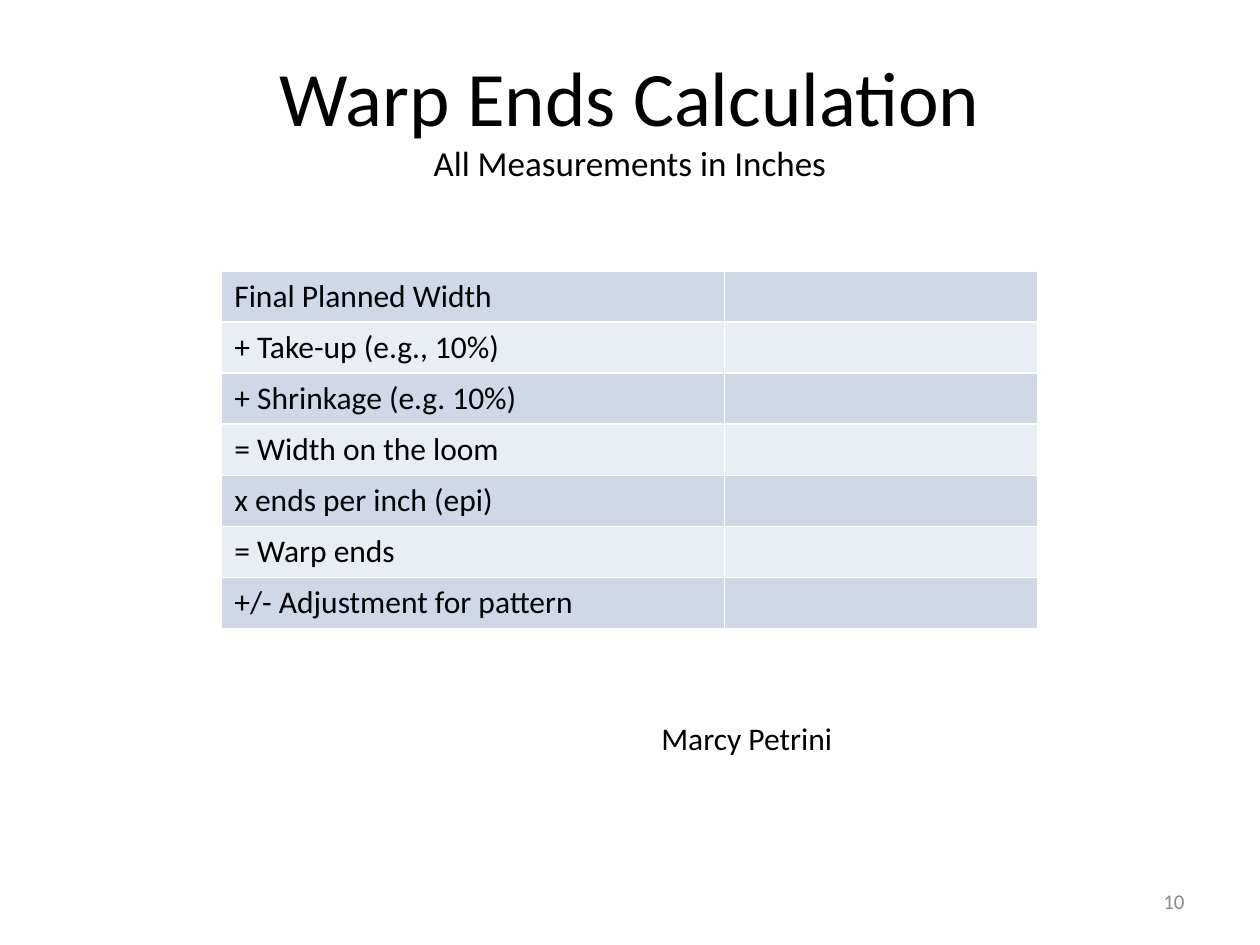
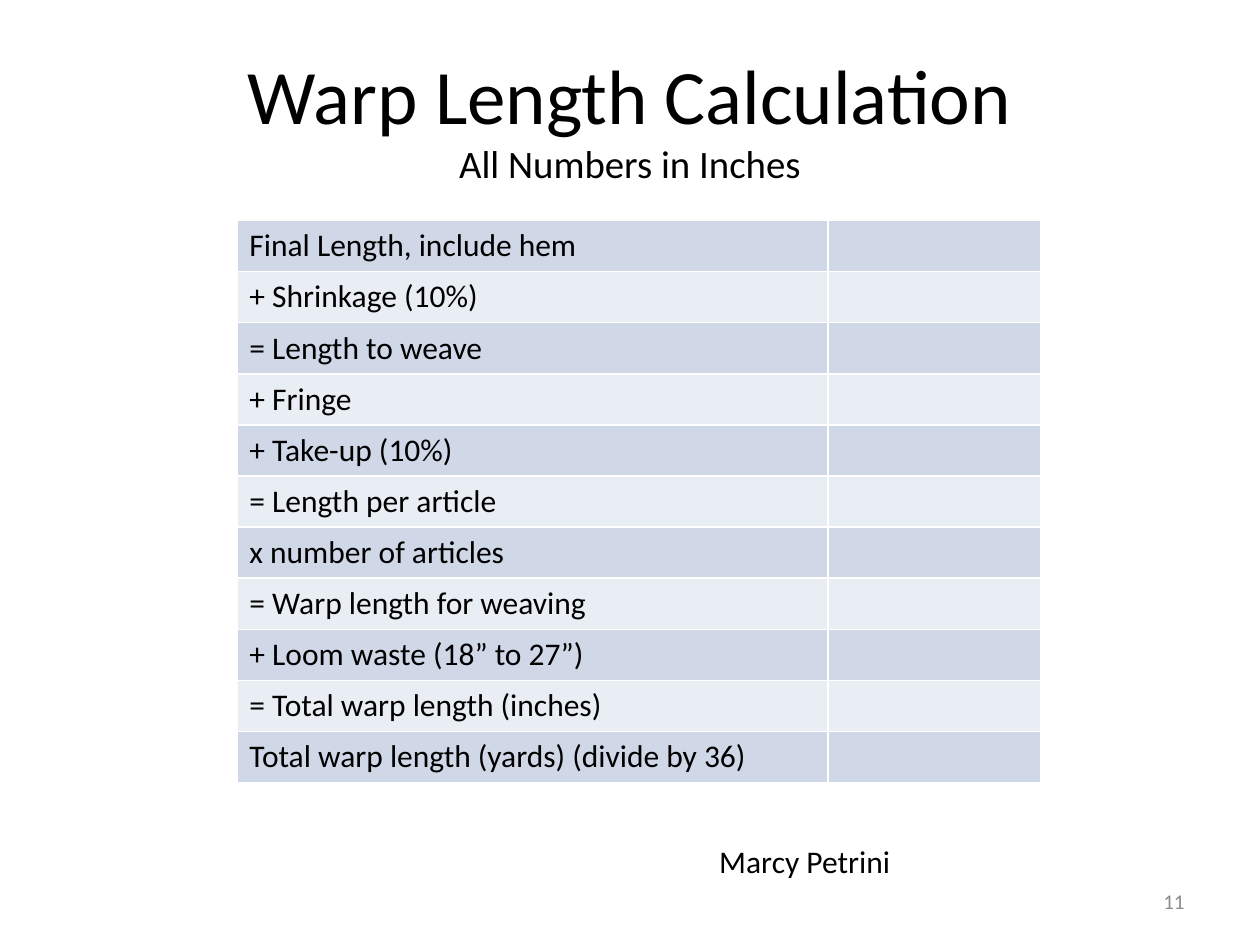
from dataclasses import dataclass

from lxml.etree import SubElement
from pptx import Presentation
from pptx.dml.color import RGBColor
from pptx.enum.text import MSO_ANCHOR, MSO_AUTO_SIZE, PP_ALIGN
from pptx.oxml.ns import qn
from pptx.util import Inches, Pt


@dataclass(frozen=True)
class Theme:
    font: str = "Calibri"
    ink: str = "000000"
    muted: str = "8C8C8C"
    bands: tuple = ("D0D8E8", "E9EDF4")
    border: str = "FFFFFF"
    border_pt: float = 1
    title: float = 44
    body: float = 18
    number: float = 12


THEME = Theme()
AUTHOR = "Marcy Petrini"
TITLE_BOX = (0.5, 0.3, 9, 1.25)
NUMBER_BOX = (7.17, 6.95, 2.33, 0.4)

SLIDES = [
    dict(
        number=10,
        title="Warp Ends Calculation",
        subtitle="All Measurements in Inches",
        subtitle_size=20,
        steps=[
            "Final Planned Width",
            "+ Take-up (e.g., 10%)",
            "+ Shrinkage (e.g. 10%)",
            "= Width on the loom",
            "x ends per inch (epi)",
            "= Warp ends",
            "+/- Adjustment for pattern",
        ],
        table_box=(1.76, 2.15, 6.48, 2.84),
        step_width=3.99,
        author_box=(5.15, 5.66, 3.09, 0.4),
    ),
    dict(
        number=11,
        title="Warp Length Calculation",
        subtitle="All Numbers in Inches",
        subtitle_size=22.2,
        steps=[
            "Final Length, include hem",
            "+ Shrinkage (10%)",
            "= Length to weave",
            "+ Fringe",
            "+ Take-up (10%)",
            "= Length per article",
            "x number of articles",
            "= Warp length for weaving",
            "+ Loom waste (18” to 27”)",
            "= Total warp length (inches)",
            "Total warp length (yards) (divide by 36)",
        ],
        table_box=(1.88, 1.75, 6.38, 4.46),
        step_width=4.69,
        author_box=(5.61, 6.63, 2.65, 0.41),
    ),
]


def inches(box):
    return [Inches(v) for v in box]


def write(p, text, size=THEME.body, color=THEME.ink, align=PP_ALIGN.LEFT):
    p.alignment = align
    r = p.add_run()
    r.text = text
    r.font.name = THEME.font
    r.font.size = Pt(size)
    r.font.color.rgb = RGBColor.from_string(color)


def add_title(s, title, subtitle, subtitle_size):
    sp = s.shapes.title
    sp.left, sp.top, sp.width, sp.height = inches(TITLE_BOX)
    tf = sp.text_frame
    tf.auto_size = MSO_AUTO_SIZE.NONE
    tf.vertical_anchor = MSO_ANCHOR.MIDDLE
    p = tf.paragraphs[0]
    write(p, title, size=THEME.title, align=PP_ALIGN.CENTER)
    p.add_line_break()
    write(p, subtitle, size=subtitle_size, align=PP_ALIGN.CENTER)


def add_text(s, text, box, anchor=MSO_ANCHOR.TOP, **fmt):
    tf = s.shapes.add_textbox(*inches(box)).text_frame
    tf.word_wrap = True
    tf.vertical_anchor = anchor
    write(tf.paragraphs[0], text, **fmt)


def style_cell(cell, fill):
    tcPr = cell._tc.get_or_add_tcPr()
    for side in ("a:lnL", "a:lnR", "a:lnT", "a:lnB"):
        ln = SubElement(tcPr, qn(side), w=str(Pt(THEME.border_pt)))
        SubElement(SubElement(ln, qn("a:solidFill")), qn("a:srgbClr"), val=THEME.border)
    cell.fill.solid()
    cell.fill.fore_color.rgb = RGBColor.from_string(fill)


def add_worksheet(s, steps, box, step_width):
    table = s.shapes.add_table(len(steps), 2, *inches(box)).table
    table.first_row = table.horz_banding = False
    table.columns[0].width = Inches(step_width)
    table.columns[1].width = Inches(box[2] - step_width)
    for i, step in enumerate(steps):
        table.rows[i].height = Inches(box[3] / len(steps))
        for cell in table.rows[i].cells:
            style_cell(cell, THEME.bands[i % 2])
        write(table.cell(i, 0).text_frame.paragraphs[0], step)


def main():
    prs = Presentation()
    prs.slide_width, prs.slide_height = Inches(10), Inches(7.5)
    for d in SLIDES:
        s = prs.slides.add_slide(prs.slide_layouts.get_by_name("Title Only"))
        add_title(s, d["title"], d["subtitle"], d["subtitle_size"])
        add_worksheet(s, d["steps"], d["table_box"], d["step_width"])
        add_text(s, AUTHOR, d["author_box"])
        add_text(s, str(d["number"]), NUMBER_BOX, anchor=MSO_ANCHOR.MIDDLE,
                 size=THEME.number, color=THEME.muted, align=PP_ALIGN.RIGHT)
    prs.save("out.pptx")


if __name__ == "__main__":
    main()
